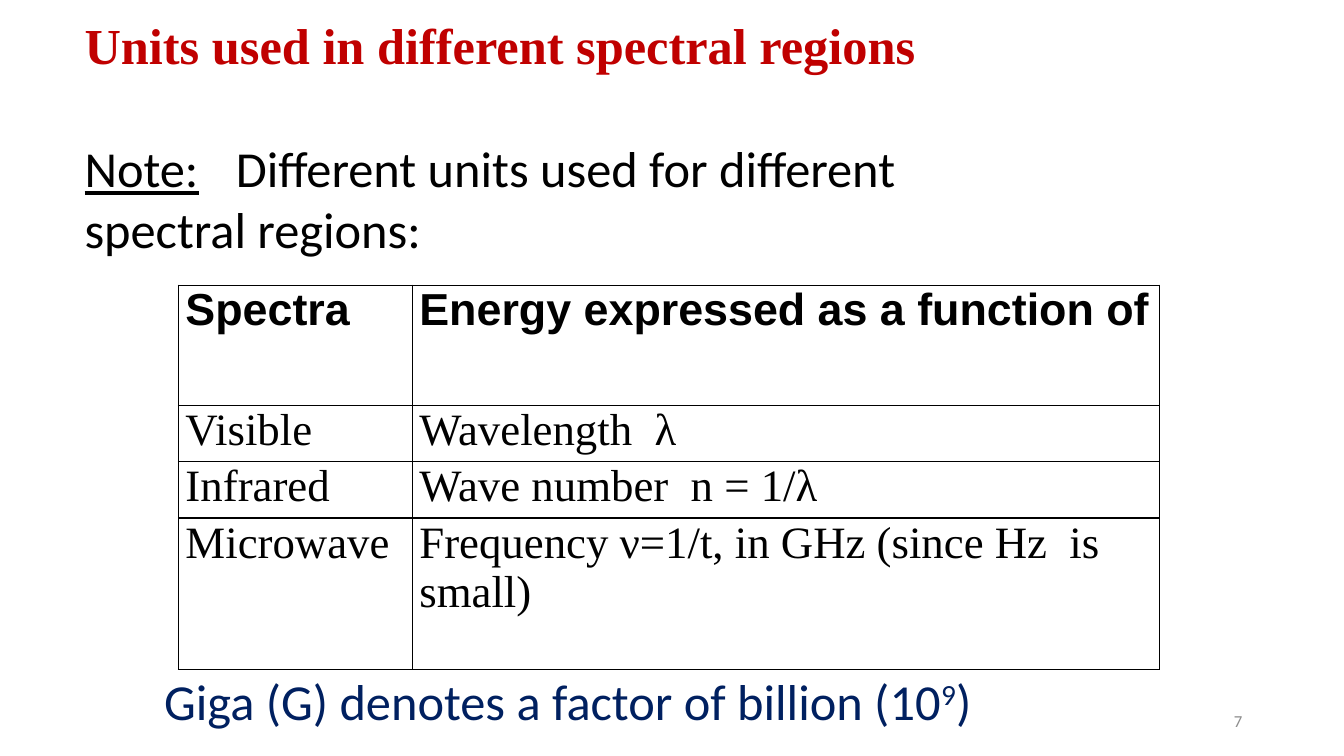
from lxml import etree
from pptx import Presentation
from pptx.dml.color import RGBColor
from pptx.enum.text import MSO_ANCHOR, MSO_AUTO_SIZE, PP_ALIGN
from pptx.oxml.ns import qn
from pptx.util import Inches, Pt

RIGHT = PP_ALIGN.RIGHT
MIDDLE = MSO_ANCHOR.MIDDLE
GROW = MSO_AUTO_SIZE.SHAPE_TO_FIT_TEXT

THEME = {
    "title": {"name": "Times New Roman", "size": Pt(36), "bold": True, "color": "C00000"},
    "body": {"name": "Calibri", "size": Pt(36), "color": "000000"},
    "label": {"name": "Calibri", "size": Pt(36), "underline": True, "color": "000000"},
    "giga": {"name": "Calibri", "size": Pt(36), "color": "002060"},
    "number": {"name": "Calibri", "size": Pt(12), "color": "8C8C8C"},
    "head": {"name": "Arial", "size": Pt(32), "bold": True, "color": "000000"},
    "cell": {"name": "Times New Roman", "size": Pt(32), "bold": False, "color": "000000"},
    "border": "000000",
}


def add_run(p, text, style):
    r = p.add_run()
    r.text = text
    for key, value in THEME[style].items():
        if key == "color":
            r.font.color.rgb = RGBColor.from_string(value)
        else:
            setattr(r.font, key, value)
    return r


def add_text(left, top, width, height):
    sp = s.shapes.add_textbox(Inches(left), Inches(top), Inches(width), Inches(height))
    sp.text_frame.word_wrap = True
    return sp.text_frame


prs = Presentation()
prs.slide_width = Inches(13.33)
prs.slide_height = Inches(7.5)
s = prs.slides.add_slide(prs.slide_layouts[6])

rows = [
    ("Spectra", "Energy expressed as a function of"),
    ("Visible", "Wavelength  λ"),
    ("Infrared", "Wave number  n = 1/λ"),
    ("Microwave", "Frequency ν=1/t, in GHz (since Hz  is small)"),
]
col_widths = [2.32, 7.41]
row_heights = [1.19, 0.56, 0.56, 1.5]
table = s.shapes.add_table(
    len(rows), len(col_widths), Inches(1.77), Inches(2.83),
    Inches(sum(col_widths)), Inches(sum(row_heights)),
).table
table.first_row = False
table.horz_banding = False
for col, width in zip(table.columns, col_widths):
    col.width = Inches(width)

for i, values in enumerate(rows):
    table.rows[i].height = Inches(row_heights[i])
    for j, value in enumerate(values):
        cell = table.cell(i, j)
        margins = {"margin_left": 0.07, "margin_right": 0.07, "margin_top": 0, "margin_bottom": 0}
        for key, margin in margins.items():
            setattr(cell, key, Inches(margin))
        add_run(cell.text_frame.paragraphs[0], value, "cell" if i else "head")
        tc_pr = cell._tc.get_or_add_tcPr()
        for side in ("a:lnL", "a:lnR", "a:lnT", "a:lnB"):
            ln = etree.SubElement(tc_pr, qn(side), w=str(Pt(1)))
            fill = etree.SubElement(ln, qn("a:solidFill"))
            etree.SubElement(fill, qn("a:srgbClr"), val=THEME["border"])
        cell.fill.background()

tf = add_text(0.74, 0.09, 11.96, 2.52)
tf.auto_size = GROW
add_run(tf.paragraphs[0], "Units used in different spectral regions", "title")
p = tf.add_paragraph()
p.space_before = Pt(45)
add_run(p, "Note:", "label")
add_run(p, "\tDifferent units used for different", "body")
add_run(tf.add_paragraph(), "spectral regions:", "body")

tf = add_text(1.53, 6.6, 10.39, 0.71)
tf.auto_size = GROW
p = tf.paragraphs[0]
add_run(p, "Giga (G) denotes a factor of billion (10", "giga")
exponent = add_run(p, "9", "giga")
exponent._r.get_or_add_rPr().set("baseline", "30000")
add_run(p, ")", "giga")

tf = add_text(9.42, 6.95, 3, 0.4)
tf.vertical_anchor = MIDDLE
p = tf.paragraphs[0]
p.alignment = RIGHT
add_run(p, "7", "number")

prs.save("out.pptx")
